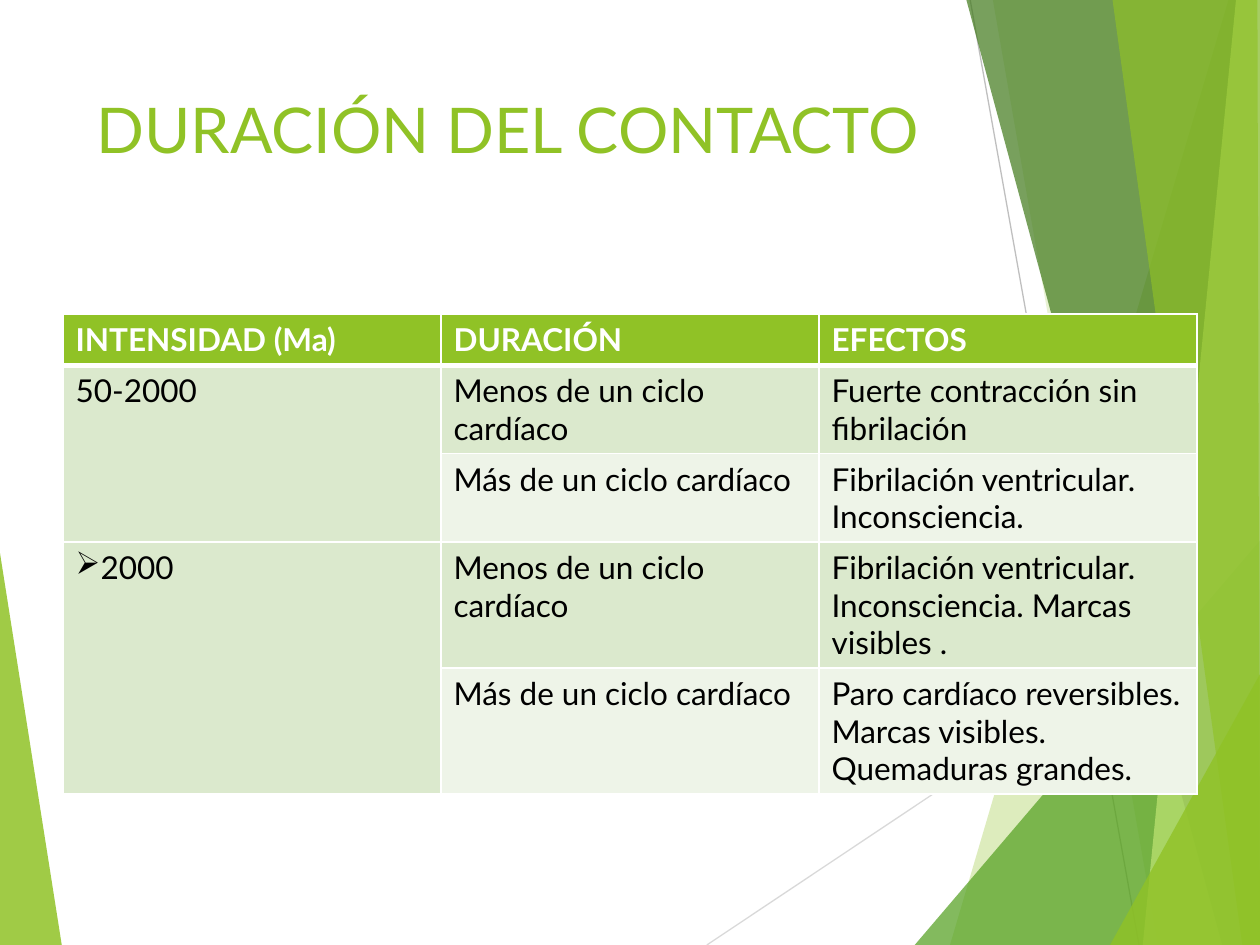
from lxml.etree import SubElement
from pptx import Presentation
from pptx.dml.color import RGBColor
from pptx.enum.shapes import MSO_CONNECTOR as Connector
from pptx.oxml.ns import qn
from pptx.util import Inches, Pt

WIDTH, HEIGHT = 10, 7.5
FONT = "Lato"
COLORS = {
    "green": "90C226",
    "leaf": "54A021",
    "forest": "3F7819",
    "lime": "C0E474",
    "light_gray": "D9D9D9",
    "gray": "BFBFBF",
    "white": "FFFFFF",
    "black": "000000",
    "band_dark": "DBE9CD",
    "band_light": "EEF4E8",
}

# Outline points, colour, opacity in percent
LEFT_FACET = ([(0, 4.39), (0.49, HEIGHT), (0, HEIGHT)], "green", 85)
RIGHT_FACETS = [
    ([(9.75, 0), (7.54, HEIGHT), (WIDTH, HEIGHT), (WIDTH, 0)], "green", 30),
    ([(7.88, 0), (9.19, HEIGHT), (WIDTH, HEIGHT), (WIDTH, 0)], "green", 20),
    ([(7.26, HEIGHT), (WIDTH, 4.29), (WIDTH, HEIGHT)], "leaf", 72),
    ([(7.67, 0), (9.7, HEIGHT), (WIDTH, HEIGHT), (WIDTH, 0)], "forest", 70),
    ([(9.81, 0), (9.07, HEIGHT), (WIDTH, HEIGHT), (WIDTH, 0)], "lime", 70),
    ([(8.83, 0), (9.86, HEIGHT), (WIDTH, HEIGHT), (9.98, 0)], "green", 65),
    ([(8.81, HEIGHT), (WIDTH, 5.35), (WIDTH, HEIGHT)], "green", 80),
]

HEADERS = ["INTENSIDAD (Ma)", "DURACIÓN", "EFECTOS"]
SHORT, LONG = "Menos de un ciclo cardíaco", "Más de un ciclo cardíaco"
ROWS = [
    ["50-2000", SHORT, "Fuerte contracción sin fibrilación"],
    ["", LONG, "Fibrilación ventricular. Inconsciencia."],
    ["2000", SHORT, "Fibrilación ventricular. Inconsciencia. Marcas visibles ."],
    ["", LONG, "Paro cardíaco reversibles. Marcas visibles. Quemaduras grandes."],
]
ROW_HEIGHTS = [0.41, 0.7, 0.7, 1, 1]


def rgb(name):
    return RGBColor.from_string(COLORS[name])


class SlideBuilder:
    def __init__(self, slide):
        self.slide = slide

    def facet(self, points, color, opacity):
        corners = [(Inches(x), Inches(y)) for x, y in points]
        builder = self.slide.shapes.build_freeform(*corners[0])
        builder.add_line_segments(corners[1:], close=True)
        shape = builder.convert_to_shape()
        shape.shadow.inherit = False
        shape.fill.solid()
        shape.fill.fore_color.rgb = rgb(color)
        shape.line.fill.background()
        color_element = shape.fill._xPr.find(".//" + qn("a:srgbClr"))
        SubElement(color_element, qn("a:alpha"), val=str(opacity * 1000))

    def line(self, start, end, color):
        ends = [Inches(value) for value in (*start, *end)]
        connector = self.slide.shapes.add_connector(Connector.STRAIGHT, *ends)
        connector.line.color.rgb = rgb(color)
        connector.line.width = Pt(0.75)
        SubElement(connector._element.spPr, qn("a:effectLst"))

    def run(self, paragraph, text, size, color, bold=False):
        run = paragraph.add_run()
        run.text = text
        run.font.name = FONT
        run.font.size = Pt(size)
        run.font.bold = bold
        run.font.color.rgb = rgb(color)

    def title(self, text, left, top, width, height):
        box = self.slide.shapes.add_textbox(*map(Inches, (left, top, width, height)))
        box.text_frame.word_wrap = True
        self.run(box.text_frame.paragraphs[0], text, 36, "green")

    def borders(self, cell, row):
        """White rules, thicker between the header and the body."""
        properties = cell._tc.get_or_add_tcPr()
        widths = {"L": 1, "R": 1, "T": 3 if row == 1 else 1, "B": 3 if row == 0 else 1}
        for side, width in widths.items():
            border = SubElement(properties, qn(f"a:ln{side}"), w=str(Pt(width)))
            fill = SubElement(border, qn("a:solidFill"))
            SubElement(fill, qn("a:srgbClr"), val=COLORS["white"])

    def bullet(self, paragraph, character):
        properties = paragraph._p.get_or_add_pPr()
        properties.set("marL", "0")
        properties.set("indent", "0")
        SubElement(properties, qn("a:buChar"), char=character)

    def table(self, headers, rows, left, top, width, row_heights):
        frame = self.slide.shapes.add_table(
            len(rows) + 1, len(headers),
            *map(Inches, (left, top, width, sum(row_heights))),
        )
        table = frame.table
        for table_row, height in zip(table.rows, row_heights):
            table_row.height = Inches(height)
        for row, texts in enumerate([headers, *rows]):
            is_header = row == 0
            for column, text in enumerate(texts):
                cell = table.cell(row, column)
                self.borders(cell, row)
                is_dark = row % 2 or column == 0
                band = "band_dark" if is_dark else "band_light"
                cell.fill.solid()
                cell.fill.fore_color.rgb = rgb("green" if is_header else band)
                if text:
                    color = "white" if is_header else "black"
                    self.run(cell.text_frame.paragraphs[0], text, 18, color, is_header)
        for row in (1, 3):
            table.cell(row, 0).merge(table.cell(row + 1, 0))
        self.bullet(table.cell(3, 0).text_frame.paragraphs[0], "➢")


def main():
    presentation = Presentation()
    presentation.slide_width = Inches(WIDTH)
    presentation.slide_height = Inches(HEIGHT)
    builder = SlideBuilder(presentation.slides.add_slide(presentation.slide_layouts[6]))

    builder.facet(*LEFT_FACET)
    builder.line((5.61, HEIGHT), (WIDTH, 4.57), "light_gray")
    builder.line((7.7, 0), (9.04, HEIGHT), "gray")
    for facet in RIGHT_FACETS:
        builder.facet(*facet)
    builder.title("DURACIÓN DEL CONTACTO", 0.67, 0.67, 6.94, 1.44)
    builder.table(HEADERS, ROWS, 0.5, 2.49, 9, ROW_HEIGHTS)
    presentation.save("out.pptx")


if __name__ == "__main__":
    main()
